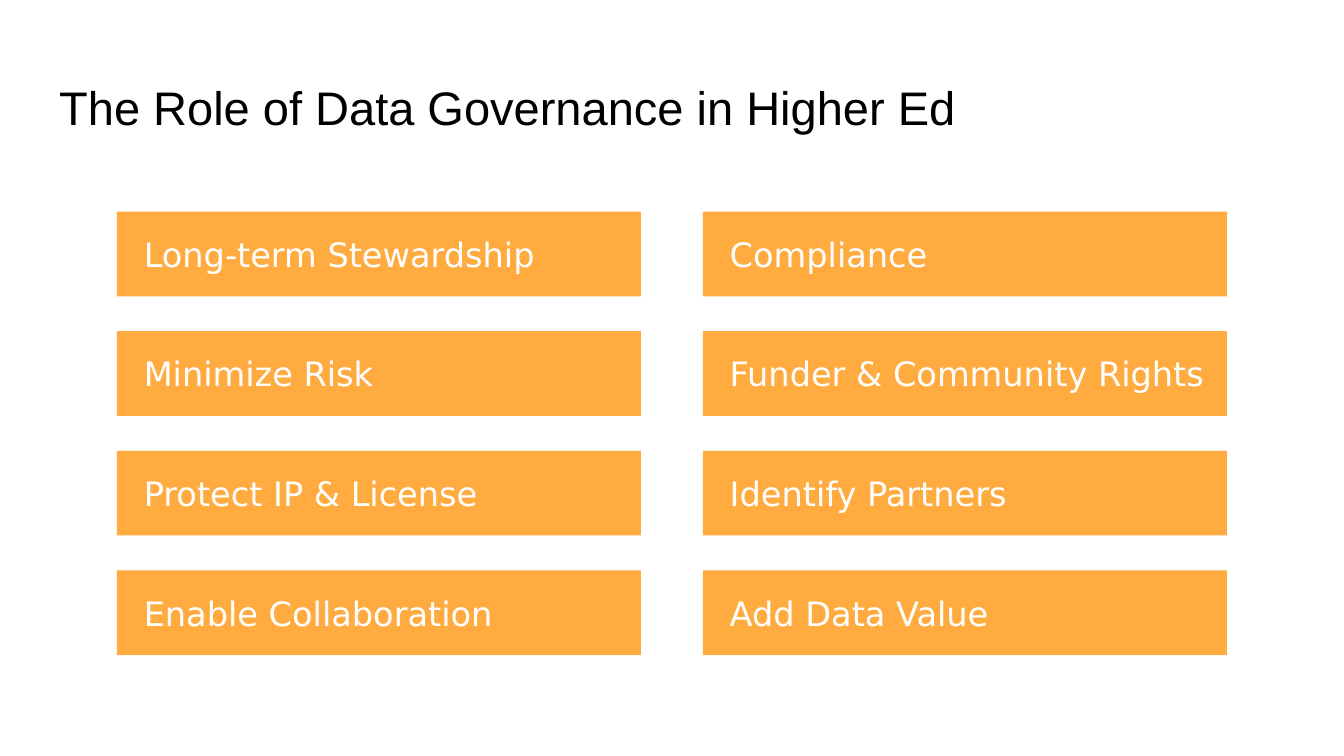
from typing import NamedTuple

from pptx import Presentation
from pptx.dml.color import RGBColor
from pptx.enum.shapes import MSO_SHAPE
from pptx.enum.text import MSO_ANCHOR, MSO_AUTO_SIZE, PP_ALIGN
from pptx.util import Emu, Pt

PX = 4572  # EMU in one px, 200 px to the inch

ORANGE = RGBColor(0xFF, 0xAB, 0x40)
WHITE = RGBColor(0xFF, 0xFF, 0xFF)
BLACK = RGBColor(0x00, 0x00, 0x00)

# Grid of role boxes
LEFT, TOP = 174, 315
BOX_W, BOX_H = 780, 126
COL_STEP, ROW_STEP = 872, 178
INSET, INDENT = 20, 20


class Role(NamedTuple):
    text: str
    col: int
    row: int


COLUMNS = [
    ["Long-term Stewardship", "Minimize Risk",
     "Protect IP & License", "Enable Collaboration"],
    ["Compliance", "Funder & Community Rights",
     "Identify Partners", "Add Data Value"],
]
ROLES = [Role(text, col, row)
         for col, texts in enumerate(COLUMNS)
         for row, text in enumerate(texts)]


def px(n: int) -> Emu:
    return Emu(n * PX)


def add_run(p, text: str, font: str, size: float, color: RGBColor) -> None:
    r = p.add_run()
    r.text = text
    r.font.name = font
    r.font.size = Pt(size)
    r.font.color.rgb = color


def set_title(sp, text: str) -> None:
    sp.left, sp.top, sp.width, sp.height = px(68), px(97), px(1864), px(126)
    tf = sp.text_frame
    tf.word_wrap = True
    tf.auto_size = MSO_AUTO_SIZE.NONE
    tf.vertical_anchor = MSO_ANCHOR.TOP
    tf.margin_left = tf.margin_right = px(INSET)
    tf.margin_top = tf.margin_bottom = px(INSET)
    p = tf.paragraphs[0]
    p.alignment = PP_ALIGN.LEFT
    add_run(p, text, "Arial", 25.2, BLACK)


def add_role(shapes, role: Role) -> None:
    sp = shapes.add_shape(
        MSO_SHAPE.RECTANGLE,
        px(LEFT + role.col * COL_STEP), px(TOP + role.row * ROW_STEP),
        px(BOX_W), px(BOX_H))
    sp.shadow.inherit = False
    sp.fill.solid()
    sp.fill.fore_color.rgb = ORANGE
    sp.line.fill.background()
    tf = sp.text_frame
    tf.word_wrap = True
    tf.vertical_anchor = MSO_ANCHOR.MIDDLE
    tf.margin_left = px(INSET + INDENT)
    tf.margin_right = px(INSET)
    p = tf.paragraphs[0]
    p.alignment = PP_ALIGN.LEFT
    add_run(p, role.text, "DejaVu Sans", 18, WHITE)


def main() -> None:
    prs = Presentation()
    prs.slide_width, prs.slide_height = px(2000), px(1125)
    layout = prs.slide_layouts[5]  # title only

    # Drop template footers that fall below the shorter slide
    for parent in (layout, prs.slide_master):
        for sp in list(parent.placeholders):
            if sp.top >= prs.slide_height:
                sp.element.getparent().remove(sp.element)

    # Title
    s = prs.slides.add_slide(layout)
    set_title(s.shapes.title, "The Role of Data Governance in Higher Ed")

    # Role boxes
    for role in ROLES:
        add_role(s.shapes, role)

    prs.save("out.pptx")


if __name__ == "__main__":
    main()
